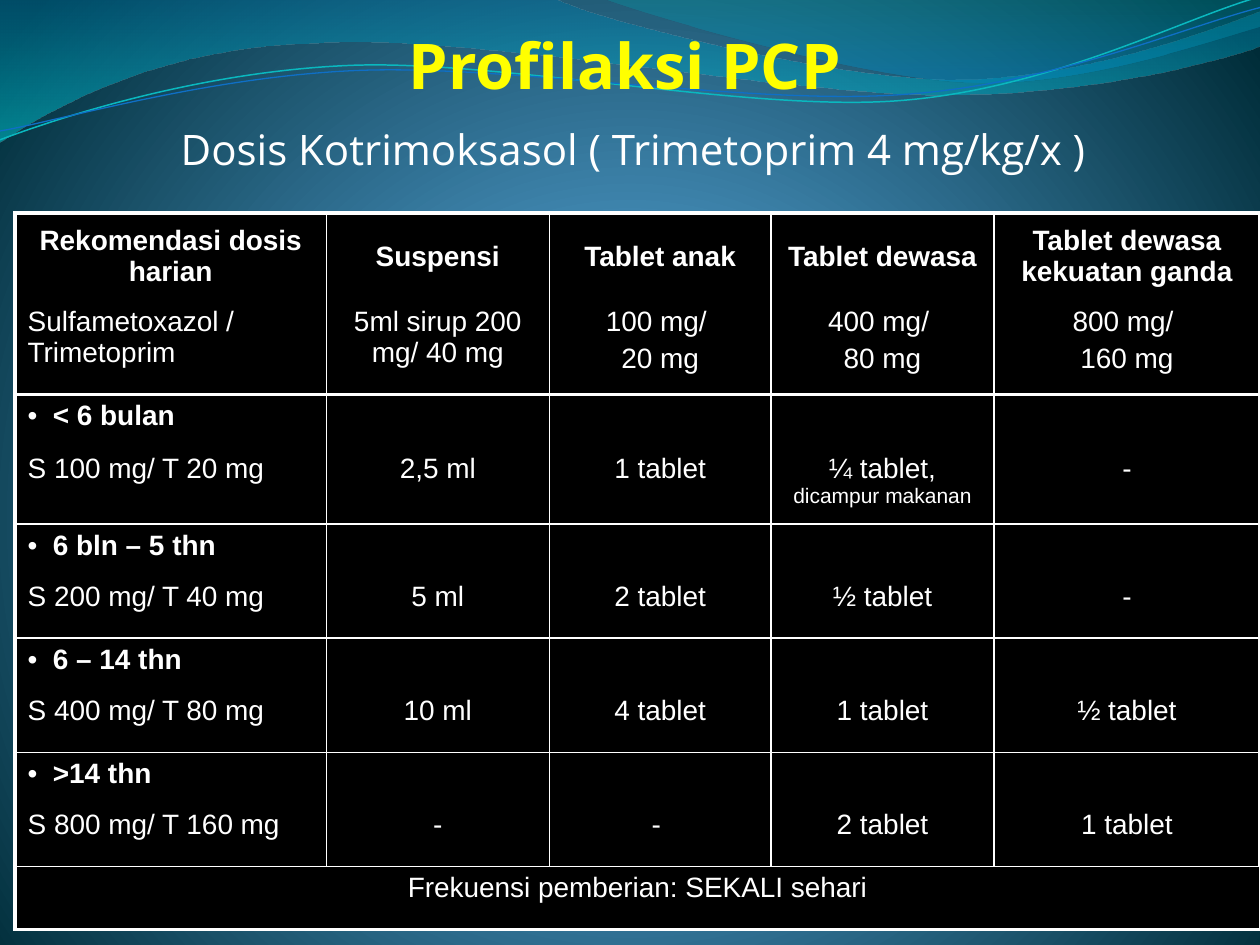
from dataclasses import dataclass

from pptx import Presentation
from pptx import util as u
from pptx.dml.color import RGBColor
from pptx.enum import text
from pptx.oxml import ns, parse_xml


@dataclass(frozen=True)
class Theme:
    """Colours, fonts and type sizes of the deck."""
    title: str = "FFFF00"
    ink: str = "FFFFFF"
    cell: str = "000000"
    heading_font: str = "Open Sans"
    table_font: str = "Arial"
    title_size: int = 36
    subtitle_size: int = 24
    cell_size: int = 16
    note_size: int = 12
    heavy: float = 2.25
    thin: float = 1
    backdrop: tuple = ((0, "4AA0D6", 100), (25, "4C98C7", 100), (100, "002C38", 100))
    broad_wave: tuple = ((0, "0074A1", 45), (100, "00C6CF", 55))
    corner_wave: tuple = ((0, "00A1A9", 30), (80, "008BBF", 45))
    upper_strand: str = "0AB8BF"
    lower_strand: str = "0F6FC6"


THEME = Theme()
WIDTH, HEIGHT = 10, 7.5
PLAIN_TABLE = "{2D5ABB26-0587-4C30-8999-92F81FD0307C}"

BROAD_WAVE = [
    (0, 0), (4.4, -0.01), (4.76, 0.17, 6.64, 0.63, 7.58, 0.63),
    (8.53, 0.63, 9.58, 0.26, 10, 0.09), (10.01, 0.36),
    (9.83, 0.44, 8.7, 0.76, 7.46, 0.75), (6.22, 0.75, 3.82, 0.28, 2.57, 0.34),
    (1.29, 0.36, 0.46, 0.83, -0.01, 1.13), (0, 0)]
CORNER_WAVE = [
    (4.79, -0.01), (5.09, 0.11, 6.82, 0.62, 7.69, 0.65),
    (8.56, 0.69, 9.61, 0.32, 10, 0.21), (10, 0), (4.79, -0.01)]
UPPER_STRAND = [
    (0, 1.11), (0.48, 0.93, 1.58, 0.57, 2.77, 0.52),
    (3.95, 0.47, 5.93, 0.89, 7.13, 0.8), (8.33, 0.71, 9.38, 0.15, 9.98, -0.02)]
LOWER_STRAND = [
    (0, 1.04), (0.47, 0.96, 1.64, 0.61, 2.83, 0.56),
    (4.03, 0.51, 5.97, 0.84, 7.17, 0.75), (8.36, 0.67, 9.41, 0.21, 10, 0.06)]

COLUMNS = [2.47, 1.77, 1.76, 1.77, 2.11]
ROWS = [0.69, 0.75, 0.42, 0.61] + [0.4, 0.5] * 3 + [0.5]
HEADINGS = ["Rekomendasi dosis harian", "Suspensi", "Tablet anak", "Tablet dewasa",
            "Tablet dewasa kekuatan ganda"]
STRENGTHS = ["Sulfametoxazol / Trimetoprim", "5ml sirup 200 mg/ 40 mg",
             "100 mg/ \n20 mg", "400 mg/ \n80 mg", "800 mg/ \n160 mg"]
DOSES = {
    "< 6 bulan": ["S 100 mg/ T 20 mg", "2,5 ml", "1 tablet",
                  "¼ tablet, |dicampur makanan", "-"],
    "6 bln – 5 thn": ["S 200 mg/ T 40 mg", "5 ml", "2 tablet", "½ tablet", "-"],
    "6 – 14 thn": ["S 400 mg/ T 80 mg", "10 ml", "4 tablet", "1 tablet", "½ tablet"],
    ">14 thn": ["S 800 mg/ T 160 mg", "-", "- ", "2 tablet", "1 tablet"],
}
FREQUENCY = "Frekuensi pemberian: SEKALI sehari"


def paint_gradient(element, stops, direction):
    """Rebuild the gradient inside an element from its stops and direction."""
    gradient = element.find(".//" + ns.qn("a:gradFill"))
    listing = "".join(
        f'<a:gs pos="{place * 1000}"><a:srgbClr val="{colour}">'
        f'<a:alpha val="{opacity * 1000}"/></a:srgbClr></a:gs>'
        for place, colour, opacity in stops)
    fresh = parse_xml(f'<a:gradFill {ns.nsdecls("a")} rotWithShape="1">'
                      f'<a:gsLst>{listing}</a:gsLst>{direction}</a:gradFill>')
    gradient.getparent().replace(gradient, fresh)


def paint_background(page):
    """Give the page its radial backdrop."""
    page.background.fill.gradient()
    paint_gradient(page.element, THEME.backdrop,
                   '<a:path path="circle"><a:fillToRect l="10000" t="110000" '
                   'r="10000" b="100000"/></a:path>')


def add_outline(page, outline, close):
    """Draw an unshadowed freeform whose six-number segments are cubic curves."""
    points = [(u.Inches(x), u.Inches(y)) for segment in outline
              for x, y in zip(segment[::2], segment[1::2])]
    builder = page.shapes.build_freeform(*points[0])
    builder.add_line_segments(points[1:], close=close)
    shape = builder.convert_to_shape()
    shape.shadow.inherit = False
    lines = iter(shape.element.findall(".//" + ns.qn("a:lnTo")))
    for segment in outline[1:]:
        line = next(lines)
        if len(segment) == 6:
            curve = parse_xml(f'<a:cubicBezTo {ns.nsdecls("a")}/>')
            line.addprevious(curve)
            for piece in (line, next(lines), next(lines)):
                curve.append(piece[0])
                piece.getparent().remove(piece)
    return shape


def add_wave(page, outline, stops):
    """Add a translucent wave without a line."""
    wave = add_outline(page, outline, True)
    wave.line.fill.background()
    wave.fill.gradient()
    paint_gradient(wave.element, stops, '<a:lin ang="5400000" scaled="1"/>')


def add_strand(page, outline, colour, width):
    """Add a thin curved line."""
    strand = add_outline(page, outline, False)
    strand.fill.background()
    strand.line.color.rgb = RGBColor.from_string(colour)
    strand.line.width = u.Pt(width)


def style_font(font, name, size, colour, bold=False):
    """Set the look of a font."""
    font.name, font.size, font.bold = name, u.Pt(size), bold
    font.color.rgb = RGBColor.from_string(colour)


def fill_title(page):
    """Place the title placeholder in front and write its two lines."""
    title = page.shapes.title
    page.shapes.element.append(title.element)
    title.left, title.top = u.Inches(0.067 * WIDTH), u.Inches(0.028 * HEIGHT)
    title.width, title.height = u.Inches(0.871 * WIDTH), u.Inches(0.243 * HEIGHT)
    frame = title.text_frame
    frame.margin_left = frame.margin_right = frame.margin_top = frame.margin_bottom = 0
    frame.word_wrap, frame.vertical_anchor = True, text.MSO_ANCHOR.TOP
    frame.auto_size = text.MSO_AUTO_SIZE.NONE
    frame.text = "Profilaksi PCP \nDosis Kotrimoksasol ( Trimetoprim 4 mg/kg/x )"
    heading, dose = frame.paragraphs
    style_font(heading.font, THEME.heading_font, THEME.title_size, THEME.title, True)
    style_font(dose.font, THEME.heading_font, THEME.subtitle_size, THEME.ink)
    dose.space_before = u.Pt(0.5 * THEME.subtitle_size)
    for para in frame.paragraphs:
        para.alignment = text.PP_ALIGN.CENTER


def add_bullet(para):
    """Give a paragraph a hanging round bullet."""
    properties = para._p.get_or_add_pPr()
    properties.set("marL", str(u.Inches(0.2)))
    properties.set("indent", str(-u.Inches(0.2)))
    for mark in (f'buFont {ns.nsdecls("a")} typeface="{THEME.table_font}"',
                 f'buChar {ns.nsdecls("a")} char="•"'):
        properties.insert_element_before(parse_xml(f"<a:{mark}/>"), "a:tabLst", "a:defRPr")


def write_cell(cell, words, align, bold=False, bullet=False):
    """Write lines in a cell, with a small note after a bar."""
    for index, line in enumerate(words.split("\n")):
        para = cell.text_frame.add_paragraph() if index else cell.text_frame.paragraphs[0]
        main, _, note = line.partition("|")
        para.add_run().text = main
        if note:
            span = para.add_run()
            span.text, span.font.size = note, u.Pt(THEME.note_size)
        para.alignment, para.space_before = align, u.Pt(0.2 * THEME.cell_size)
        style_font(para.font, THEME.table_font, THEME.cell_size, THEME.ink, bold)
        if bullet:
            add_bullet(para)


def frame_cell(cell, row, column):
    """Fill a cell and rule its borders, with none inside a pair of rows."""
    cell.fill.solid()
    cell.fill.fore_color.rgb = RGBColor.from_string(THEME.cell)
    edges = {0: THEME.heavy, 2: THEME.heavy, len(ROWS): THEME.heavy}
    top, bottom = (0 if edge % 2 and edge < len(ROWS) else edges.get(edge, THEME.thin)
                   for edge in (row, row + 1))
    widths = {"lnL": THEME.thin if column else THEME.heavy,
              "lnR": THEME.heavy if column == len(COLUMNS) - 1 else THEME.thin,
              "lnT": top, "lnB": bottom}
    ink = f'<a:solidFill><a:srgbClr val="{THEME.ink}"/></a:solidFill>'
    for place, (side, width) in enumerate(widths.items()):
        cell._tc.get_or_add_tcPr().insert(place, parse_xml(
            f'<a:{side} {ns.nsdecls("a")} w="{u.Pt(width)}">'
            f'{ink if width else "<a:noFill/>"}</a:{side}>'))


def add_dose_table(page):
    """Add the table of doses by age."""
    table = page.shapes.add_table(
        len(ROWS), len(COLUMNS), u.Inches(0.12), u.Inches(1.69),
        u.Inches(sum(COLUMNS)), u.Inches(sum(ROWS))).table
    table._tbl.tblPr.find(ns.qn("a:tableStyleId")).text = PLAIN_TABLE
    table.first_row = table.horz_banding = False
    for column, width in zip(table.columns, COLUMNS):
        column.width = u.Inches(width)
    for row, height in zip(table.rows, ROWS):
        row.height = u.Inches(height)
    content = [HEADINGS, STRENGTHS]
    for age, doses in DOSES.items():
        content += [[age], doses]
    content.append([FREQUENCY])
    last = len(ROWS) - 1
    for row, entries in enumerate(content):
        for column in range(len(COLUMNS)):
            frame_cell(table.cell(row, column), row, column)
        for column, words in enumerate(entries):
            cell = table.cell(row, column)
            centred = column or row in (0, last)
            is_age = 0 < row < last and row % 2 == 0
            write_cell(cell, words, text.PP_ALIGN.CENTER if centred else text.PP_ALIGN.LEFT,
                       bold=row == 0 or is_age, bullet=is_age)
            if row == 0:
                cell.vertical_anchor = text.MSO_ANCHOR.MIDDLE
    table.cell(last, 0).merge(table.cell(last, len(COLUMNS) - 1))


def main():
    """Build and save the deck."""
    deck = Presentation()
    deck.slide_width, deck.slide_height = u.Inches(WIDTH), u.Inches(HEIGHT)
    page = deck.slides.add_slide(deck.slide_layouts.get_by_name("Title Only"))
    paint_background(page)
    add_wave(page, BROAD_WAVE, THEME.broad_wave)
    add_wave(page, CORNER_WAVE, THEME.corner_wave)
    add_strand(page, UPPER_STRAND, THEME.upper_strand, 0.85)
    add_strand(page, LOWER_STRAND, THEME.lower_strand, 0.75)
    fill_title(page)
    add_dose_table(page)
    deck.save("out.pptx")


if __name__ == "__main__":
    main()
